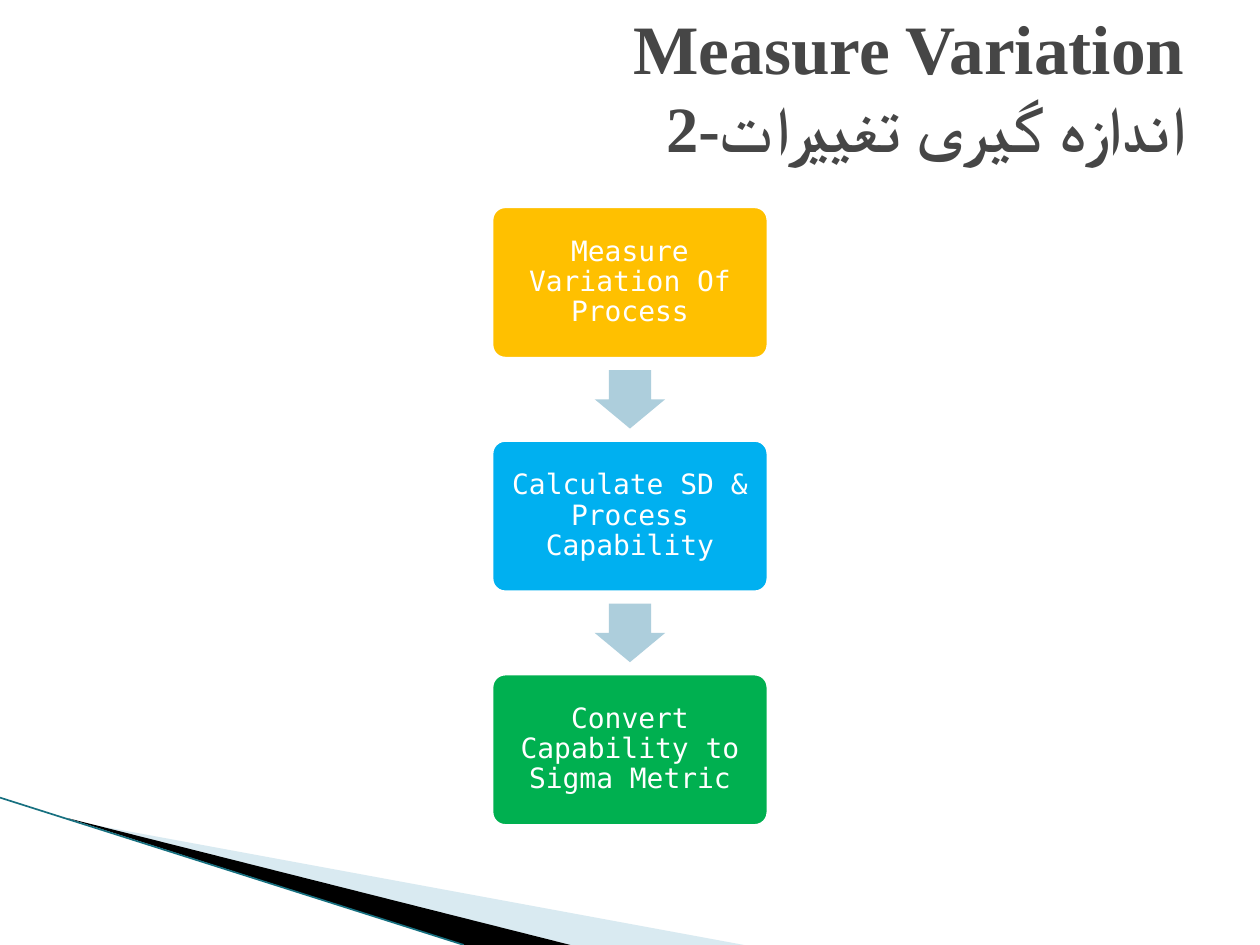
import dataclasses

import lxml.etree
import pptx
import pptx.dml.color
import pptx.enum.shapes
import pptx.enum.text
import pptx.oxml.ns
import pptx.util

Cm = pptx.util.Cm
Pt = pptx.util.Pt
SHAPE = pptx.enum.shapes.MSO_SHAPE
ALIGN = pptx.enum.text.PP_ALIGN
ANCHOR = pptx.enum.text.MSO_ANCHOR
qn = pptx.oxml.ns.qn


@dataclasses.dataclass(frozen=True)
class Theme:
    """Colours, fonts and type sizes of the deck."""

    title_font: str = "Times New Roman"
    step_font: str = "DejaVu Sans Mono"
    title_sizes: tuple = (39.6, 36.9)
    step_size: float = 16
    title: str = "464646"
    white: str = "FFFFFF"
    arrow: str = "ADCEDC"
    wedge: str = "A0CBDC"
    shade: str = "000000"
    edge: str = "177080"


@dataclasses.dataclass(frozen=True)
class Box:
    """A region of the page, in centimetres."""

    left: float
    top: float
    width: float
    height: float

    def place(self):
        """Return the region as python-pptx lengths."""
        return [Cm(v) for v in (self.left, self.top, self.width, self.height)]


THEME = Theme()
TITLE_LINES = ("Measure Variation", "2-اندازه گیری تغییرات")
STEPS = (
    ("Measure Variation Of Process", "FFC000"),
    ("Calculate SD & Process Capability", "00B0F0"),
    ("Convert Capability to Sigma Metric", "00B050"),
)


def rgb(value):
    """Turn a hex string into a colour."""
    return pptx.dml.color.RGBColor.from_string(value)


def paint(shape, colour):
    """Give a shape a flat fill with no outline or shadow."""
    shape.shadow.inherit = False
    shape.fill.solid()
    shape.fill.fore_color.rgb = rgb(colour)
    shape.line.fill.background()


def style_span(span, font, size, colour, bold=False):
    """Format one run of text."""
    span.font.name = font
    span.font.size = Pt(size)
    span.font.bold = bold
    span.font.color.rgb = rgb(colour)


def set_margins(frame, margin_x, margin_y):
    """Set the inner margins of a text frame in centimetres."""
    frame.margin_left = frame.margin_right = Cm(margin_x)
    frame.margin_top = frame.margin_bottom = Cm(margin_y)


def add_wedge(page, box, points, colour):
    """Draw a filled polygon whose points are relative to the box."""
    corners = [(Cm(box.left + x), Cm(box.top + y)) for x, y in points]
    builder = page.shapes.build_freeform(*corners[0])
    builder.add_line_segments(corners[1:], close=True)
    wedge = builder.convert_to_shape()
    paint(wedge, colour)
    return wedge


def add_corner(page, box):
    """Draw the slanted decoration along the bottom left corner."""
    light = add_wedge(page, box, [(1.4, 0.46), (15, box.height), (11.5, box.height)], THEME.wedge)
    colour = light.fill._xPr.find(qn("a:solidFill"))[0]
    lxml.etree.SubElement(colour, qn("a:alpha"), val="40000")
    add_wedge(page, box, [(1.35, 0.41), (11.5, box.height), (9.35, box.height)], THEME.shade)
    edge = page.shapes.add_connector(
        pptx.enum.shapes.MSO_CONNECTOR.STRAIGHT,
        Cm(box.left), Cm(box.top), Cm(box.left + 9.35), Cm(box.top + box.height),
    )
    edge.line.color.rgb = rgb(THEME.edge)
    edge.line.width = Pt(0.95)
    lxml.etree.SubElement(edge._element.spPr, qn("a:effectLst"))


def add_title(page, box):
    """Write the two-language title, aligned right."""
    frame = page.shapes.add_textbox(*box.place()).text_frame
    frame.word_wrap = True
    frame.vertical_anchor = ANCHOR.TOP
    set_margins(frame, 0.25, 0)
    frame.text = "\n".join(TITLE_LINES)
    for para, size in zip(frame.paragraphs, THEME.title_sizes):
        para.alignment = ALIGN.RIGHT
        span = para.runs[0]
        style_span(span, THEME.title_font, size, THEME.title, bold=True)
        lxml.etree.SubElement(span.font._element, qn("a:cs"), typeface=THEME.title_font)


def add_step(page, box, text, colour):
    """Draw one rounded step with its label."""
    step = page.shapes.add_shape(SHAPE.ROUNDED_RECTANGLE, *box.place())
    step.adjustments[0] = 0.1
    paint(step, colour)
    step.line.color.rgb = rgb(THEME.white)
    step.line.width = Pt(4.33)
    frame = step.text_frame
    frame.word_wrap = True
    frame.vertical_anchor = ANCHOR.MIDDLE
    set_margins(frame, 0.27, 0.27)
    frame.text = text
    para = frame.paragraphs[0]
    para.alignment = ALIGN.CENTER
    para.line_spacing = 0.9
    style_span(para.runs[0], THEME.step_font, THEME.step_size, THEME.white)


def add_arrow(page, box):
    """Draw a block arrow pointing down."""
    arrow = page.shapes.add_shape(SHAPE.DOWN_ARROW, *box.place())
    arrow.adjustments[0] = 0.6
    arrow.adjustments[1] = 0.5
    paint(arrow, THEME.arrow)


def add_process(page, box):
    """Stack the steps evenly in the box with arrows in the gaps."""
    step_height, arrow_width, arrow_height = 3.15, 1.42, 1.18
    gap = (box.height - len(STEPS) * step_height) / (len(STEPS) - 1)
    arrow_left = box.left + (box.width - arrow_width) / 2
    for index, (text, colour) in enumerate(STEPS):
        top = box.top + index * (step_height + gap)
        if index:
            arrow_top = top - (gap + arrow_height) / 2
            add_arrow(page, Box(arrow_left, arrow_top, arrow_width, arrow_height))
        add_step(page, Box(box.left, top, box.width, step_height), text, colour)


def main():
    """Build the deck and save it."""
    deck = pptx.Presentation()
    deck.slide_width, deck.slide_height = Cm(25.4), Cm(19.05)
    page = deck.slides.add_slide(deck.slide_layouts[6])
    add_corner(page, Box(0, 16.08, 15, 2.97))
    add_title(page, Box(1.27, 0.1, 22.86, 3.4))
    add_process(page, Box(9.87, 4.12, 5.66, 12.57))
    deck.save("out.pptx")


if __name__ == "__main__":
    main()
